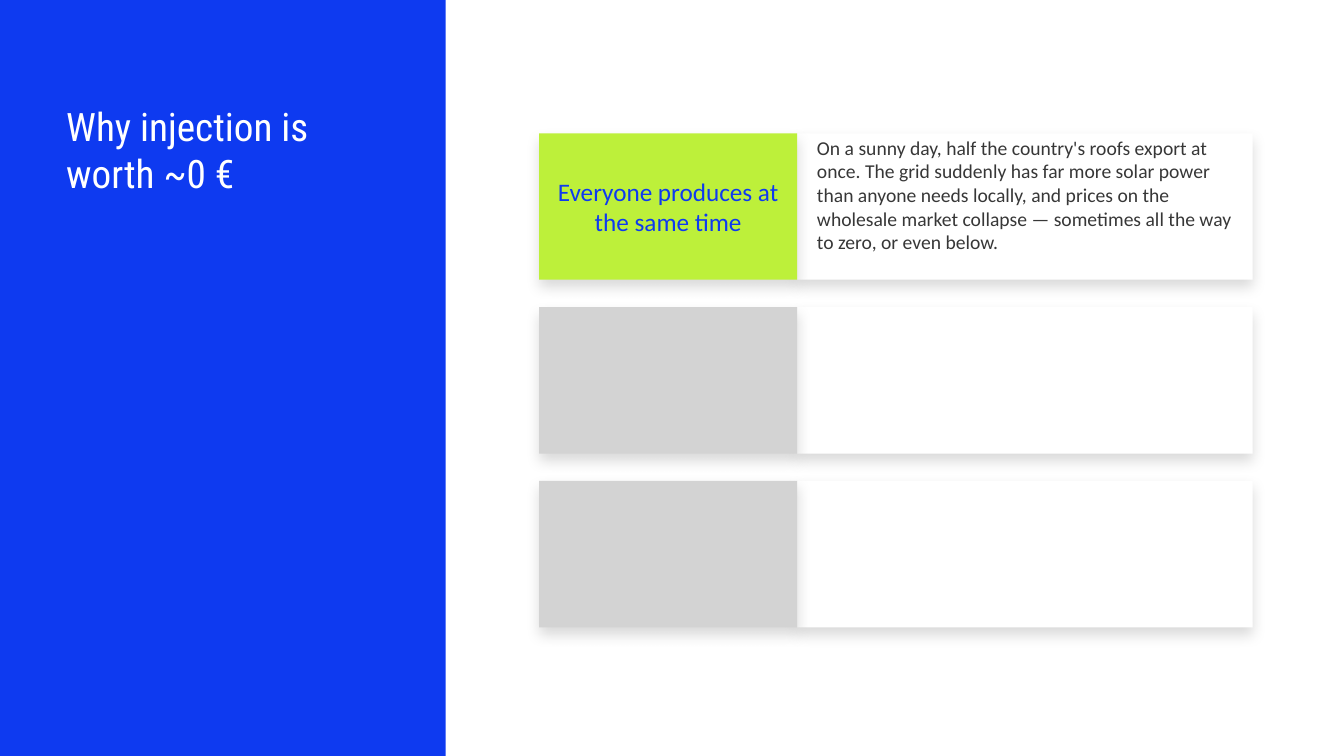
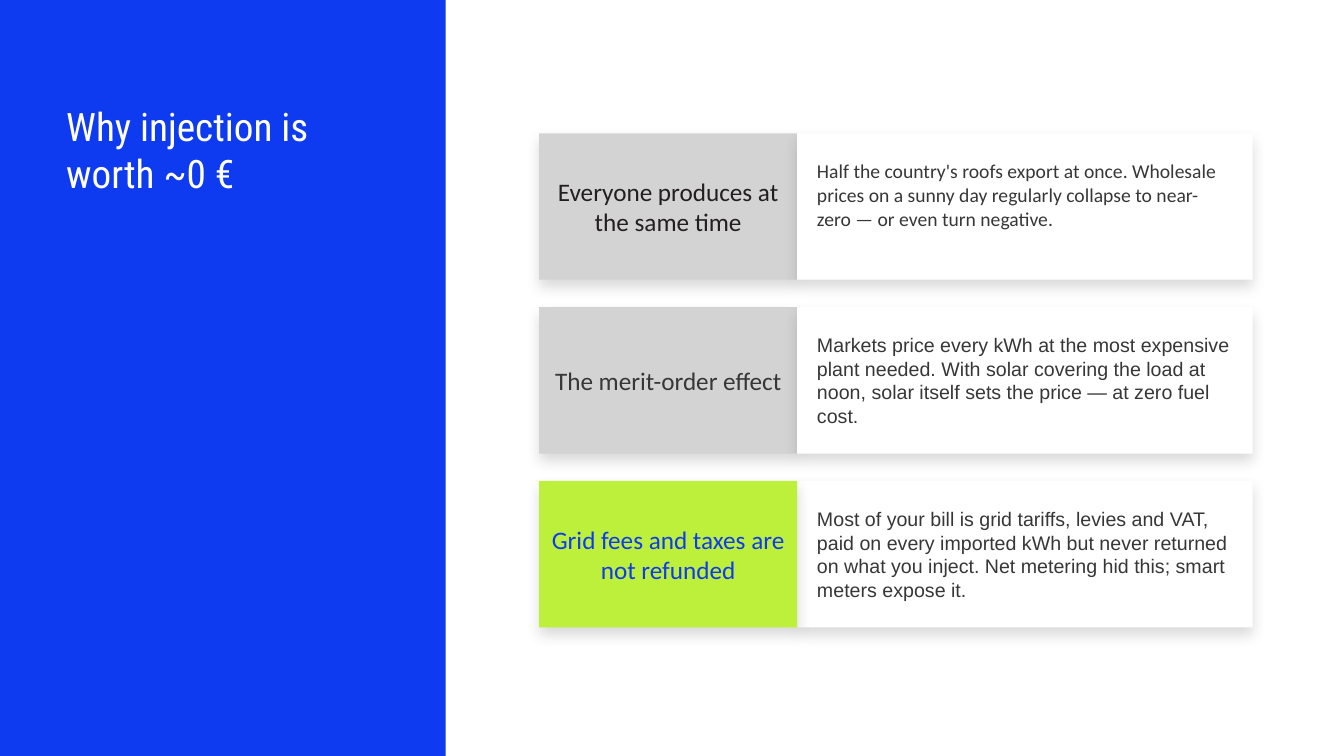
from dataclasses import dataclass

from lxml.etree import SubElement
from pptx import Presentation
from pptx.dml.color import RGBColor
from pptx.enum.shapes import MSO_SHAPE
from pptx.enum.text import MSO_ANCHOR, PP_ALIGN
from pptx.oxml.ns import qn
from pptx.util import Cm, Pt


@dataclass(frozen=True)
class Theme:
    blue: str = "0E3AF0"
    lime: str = "BDF03A"
    grey: str = "D3D3D3"
    white: str = "FFFFFF"
    ink: str = "373737"
    black: str = "231F20"
    head: str = "Roboto Condensed"
    main: str = "Calibri"
    alt: str = "Arial"
    title: int = 28
    label: int = 18
    body: int = 14
    lead: float = 1.2


WIDE, HIGH = 33.87, 19.05
BAND = 11.23
LEFT, TOP = 13.59, 3.36
LABEL, BODY, TALL = 6.5, 11.48, 3.69
STEP = 4.38
LIFT = 0.6  # raises the text of the first row by half of this

TITLE = "Why injection is worth ~0 €"
SAME = "Everyone produces at the same time"


class Deck:
    def __init__(self, theme):
        self.theme = theme
        self.file = Presentation()
        self.file.slide_width = Cm(WIDE)
        self.file.slide_height = Cm(HIGH)
        self.slide = None

    def start(self, title):
        """Add a slide with the side band and its title."""
        t = self.theme
        self.slide = self.file.slides.add_slide(self.file.slide_layouts[6])
        self.rect(0, 0, BAND, HIGH, t.blue)
        box = self.slide.shapes.add_textbox(Cm(1.42), Cm(2.46), Cm(8.41), Cm(3.84))
        self.text(box, title, t.title, t.head, t.white, (0.25, 0.13, 0.25, 0.13))

    def rect(self, x, y, w, h, fill):
        box = self.slide.shapes.add_shape(
            MSO_SHAPE.RECTANGLE, Cm(x), Cm(y), Cm(w), Cm(h))
        box.fill.solid()
        box.fill.fore_color.rgb = RGBColor.from_string(fill)
        box.line.fill.background()
        box.shadow.inherit = False
        return box

    def card(self, x, y, w, fill):
        """Draw a rectangle with a soft shadow below it."""
        box = self.rect(x, y, w, TALL, fill)
        effects = box._element.spPr.find(qn("a:effectLst"))
        shade = SubElement(effects, qn("a:outerShdw"), blurRad=str(Pt(10)),
                           dist=str(Pt(5)), dir="5400000", algn="t", rotWithShape="0")
        tint = SubElement(shade, qn("a:srgbClr"), val="000000")
        SubElement(tint, qn("a:alpha"), val="15000")
        return box

    def text(self, box, words, size, font, color, pad,
             align=PP_ALIGN.LEFT, anchor=MSO_ANCHOR.TOP):
        frame = box.text_frame
        frame.word_wrap = True
        frame.vertical_anchor = anchor
        (frame.margin_left, frame.margin_top,
         frame.margin_right, frame.margin_bottom) = map(Cm, pad)
        para = frame.paragraphs[0]
        para.alignment = align
        para.line_spacing = Pt(size * self.theme.lead)
        run = para.add_run()
        run.text = words
        run.font.size = Pt(size)
        run.font.name = font
        run.font.color.rgb = RGBColor.from_string(color)

    def label(self, y, words, fill, color):
        box = self.card(LEFT, y, LABEL, fill)
        if words:
            self.text(box, words, self.theme.label, self.theme.main, color,
                      (0.2, 0.1, 0.2, 0.1), PP_ALIGN.CENTER, MSO_ANCHOR.MIDDLE)

    def body(self, y, words, font, lift):
        box = self.card(LEFT + LABEL, y, BODY, self.theme.white)
        if words:
            self.text(box, words, self.theme.body, font, self.theme.ink,
                      (0.5, 0.1, 0.5, 0.1 + lift), anchor=MSO_ANCHOR.MIDDLE)

    def row(self, index, label="", body="", color=None, live=False, over=False):
        """Draw one reason; over puts the body card above the label card."""
        t = self.theme
        y = TOP + index * STEP
        fill, color = (t.lime, t.blue) if live else (t.grey, color or t.ink)
        font, lift = (t.alt, 0) if index else (t.main, LIFT)
        if over:
            self.label(y, label, fill, color)
        self.body(y, body, font, lift)
        if not over:
            self.label(y, label, fill, color)


def main():
    theme = Theme()
    deck = Deck(theme)
    slides = [
        [dict(label=SAME, live=True,
              body="On a sunny day, half the country's roofs export at once. "
                   "The grid suddenly has far more solar power than anyone needs "
                   "locally, and prices on the wholesale market collapse — "
                   "sometimes all the way to zero, or even below."),
         {}, {}],
        [dict(label=SAME, color=theme.black, over=True,
              body="Half the country's roofs export at once. Wholesale prices on "
                   "a sunny day regularly collapse to near-zero — or even turn "
                   "negative."),
         dict(label="The merit-order effect", over=True,
              body="Markets price every kWh at the most expensive plant needed. "
                   "With solar covering the load at noon, solar itself sets the "
                   "price — at zero fuel cost."),
         dict(label="Grid fees and taxes are not refunded", live=True,
              body="Most of your bill is grid tariffs, levies and VAT, paid on "
                   "every imported kWh but never returned on what you inject. "
                   "Net metering hid this; smart meters expose it.")],
    ]
    for rows in slides:
        deck.start(TITLE)
        for index, row in enumerate(rows):
            deck.row(index, **row)
    deck.file.save("out.pptx")


if __name__ == "__main__":
    main()
